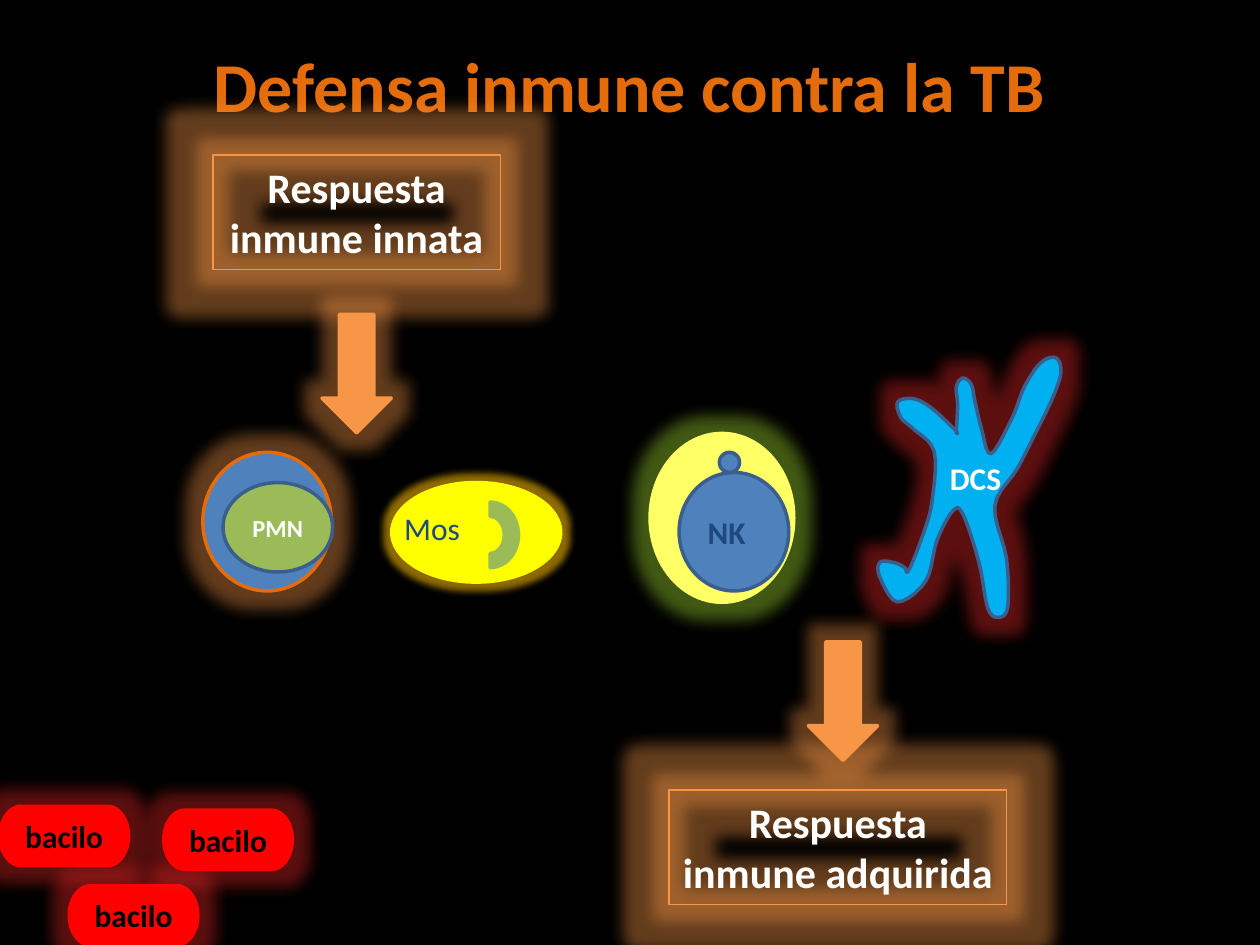
from math import hypot

from lxml.etree import SubElement
from pptx import Presentation
from pptx.dml.color import RGBColor
from pptx.enum.shapes import MSO_SHAPE
from pptx.enum.text import MSO_ANCHOR, MSO_AUTO_SIZE, PP_ALIGN
from pptx.oxml.ns import qn
from pptx.util import Inches, Pt

COLORS = {
    "black": "000000", "white": "FFFFFF", "title": "E46C0A", "orange": "F79646",
    "blue": "4F81BD", "outline": "3A5F8C", "navy": "1F497D", "green": "9BBB59",
    "pale": "FFFF66", "yellow": "FFFF00", "sky": "00B0F0", "red": "FF0000",
    "lime glow": "A5E030", "gold glow": "EFB500", "red glow": "E62626",
}
GLOWS = {
    "orange": ("orange", 18, 40),
    "lime": ("lime glow", 18, 40),
    "gold": ("gold glow", 8, 60),
    "red": ("red glow", 18, 40),
}
TITLE = "Defensa inmune contra la TB"
RESPONSES = [
    ("Respuesta inmune innata", (1.69, 1.23, 2.28, 0.91)),
    ("Respuesta inmune adquirida", (5.31, 6.27, 2.68, 0.91)),
]
ARROW_SIZE = (0.94, 0.55)
ARROWS = [(2.36, 2.69), (6.22, 5.29)]
BACILLUS_SIZE = (1.02, 0.47)
BACILLI = [(0, 6.4), (0.55, 7.03), (1.3, 6.43)]
NK_CELL = [
    (MSO_SHAPE.OVAL, (5.16, 3.44, 1.14, 1.34), "pale", "pale", "lime"),
    (MSO_SHAPE.OVAL, (5.39, 3.75, 0.87, 0.94), "blue", "outline"),
    (MSO_SHAPE.FLOWCHART_CONNECTOR, (5.71, 3.59, 0.16, 0.16), "blue", "outline"),
]
PMN_CELL = [
    (MSO_SHAPE.OVAL, (1.61, 3.59, 1.02, 1.1), "blue", "title", "orange"),
    (MSO_SHAPE.OVAL, (1.77, 3.83, 0.87, 0.71), "green", "outline"),
]
LIMB_SPINES = {
    "left arm": [(7.5, 3.5, 0.12), (7.32, 3.32, 0.11), (7.2, 3.24, 0.09)],
    "left leg": [(7.48, 4.02, 0.09), (7.38, 4.27, 0.06), (7.28, 4.57, 0.08),
                 (7.15, 4.64, 0.14), (7.04, 4.52, 0.08)],
    "right leg": [(7.77, 4.05, 0.13), (7.88, 4.45, 0.11), (7.92, 4.82, 0.08)],
    "right arm": [(7.97, 3.66, 0.12), (8.13, 3.37, 0.11), (8.24, 3.12, 0.12), (8.34, 2.92, 0.09)],
    "middle arm": [(7.69, 3.41, 0.1), (7.67, 3.2, 0.07), (7.65, 3.06, 0.06)],
}
CURVE_STEPS = 5


def limb_contour(spine):
    outward, homeward = [], []
    for index, (x, y, half_width) in enumerate(spine):
        before = spine[max(index - 1, 0)]
        after = spine[min(index + 1, len(spine) - 1)]
        run, rise = after[0] - before[0], after[1] - before[1]
        scale = half_width / hypot(run, rise)
        along_x, along_y = run * scale, rise * scale
        outward.append((x - along_y, y + along_x))
        homeward.insert(0, (x + along_y, y - along_x))
    tip = (x + along_x, y + along_y)
    return outward + [tip] + homeward


def spline(a, b, c, d, t):
    return b + t / 2 * (c - a + t * (2 * a - 5 * b + 4 * c - d + t * (3 * (b - c) + d - a)))


def smooth_loop(knots):
    points = []
    for index in range(len(knots)):
        neighbours = [knots[(index + shift) % len(knots)] for shift in (-1, 0, 1, 2)]
        for step in range(CURVE_STEPS):
            points.append([spline(*axis, step / CURVE_STEPS) for axis in zip(*neighbours)])
    return points


def rgb(name):
    return RGBColor.from_string(COLORS[name])


def add_glow(shape, color, radius, opacity):
    effects = shape.element.spPr.find(qn("a:effectLst"))
    glow = SubElement(effects, qn("a:glow"), rad=str(Pt(radius)))
    tint = SubElement(glow, qn("a:srgbClr"), val=COLORS[color])
    SubElement(tint, qn("a:alpha"), val=str(opacity * 1000))


def paint(shape, fill, line, glow=None, width=2):
    shape.shadow.inherit = False
    if fill:
        shape.fill.solid()
        shape.fill.fore_color.rgb = rgb(fill)
    else:
        shape.fill.background()
    shape.line.color.rgb = rgb(line)
    shape.line.width = Pt(width)
    if glow:
        add_glow(shape, *GLOWS[glow])


def add_figure(page, kind, place, fill, line, glow=None, width=2):
    shape = page.shapes.add_shape(kind, *map(Inches, place))
    paint(shape, fill, line, glow, width)
    return shape


def add_dendritic_cell(page):
    knots = [knot for spine in LIMB_SPINES.values() for knot in limb_contour(spine)]
    start, *rest = [tuple(map(Inches, point)) for point in smooth_loop(knots)]
    builder = page.shapes.build_freeform(*start)
    builder.add_line_segments(rest, close=True)
    paint(builder.convert_to_shape(), "sky", "outline", "red")


def write(shape, text, size, color, bold=True, align=PP_ALIGN.CENTER, anchor=MSO_ANCHOR.MIDDLE):
    frame = shape.text_frame
    frame.word_wrap = True
    frame.auto_size = MSO_AUTO_SIZE.NONE
    frame.vertical_anchor = anchor
    frame.text = text
    paragraph = frame.paragraphs[0]
    paragraph.alignment = align
    font = paragraph.font
    font.name, font.size, font.bold = "Calibri", Pt(size), bold
    font.color.rgb = rgb(color)


def add_label(page, place, text, color, bold):
    box = page.shapes.add_textbox(*map(Inches, place))
    write(box, text, 18, color, bold, PP_ALIGN.LEFT, MSO_ANCHOR.TOP)


def main():
    deck = Presentation()
    deck.slide_width, deck.slide_height = Inches(10), Inches(7.5)
    page = deck.slides.add_slide(deck.slide_layouts[5])
    page.background.fill.solid()
    page.background.fill.fore_color.rgb = rgb("black")

    title = page.shapes.title
    title.left, title.top, title.width, title.height = map(Inches, (0.43, 0.29, 9.13, 1.45))
    write(title, TITLE, 40, "title", anchor=MSO_ANCHOR.TOP)

    nk_body, nk_nucleus, nk_bud = [add_figure(page, *part) for part in NK_CELL]
    write(nk_nucleus, "NK", 18, "navy", align=PP_ALIGN.LEFT)

    add_figure(page, MSO_SHAPE.OVAL, (3.11, 3.83, 1.34, 0.79), "yellow", "yellow", "gold")
    add_label(page, (3.11, 3.99, 0.94, 0.4), "Mos", "navy", False)
    mos_nucleus = add_figure(page, MSO_SHAPE.BLOCK_ARC, (3.63, 4.02, 0.52, 0.45), "green", "green")
    mos_nucleus.rotation = 90

    pmn_body, pmn_nucleus = [add_figure(page, *part) for part in PMN_CELL]
    write(pmn_nucleus, "PMN", 14, "white")

    add_dendritic_cell(page)
    add_label(page, (7.44, 3.59, 0.63, 0.4), "DCS", "white", True)

    for text, place in RESPONSES:
        box = add_figure(page, MSO_SHAPE.RECTANGLE, place, None, "orange", "orange", 0.75)
        write(box, text, 24, "white", anchor=MSO_ANCHOR.TOP)
    for corner in ARROWS:
        arrow = add_figure(page, MSO_SHAPE.RIGHT_ARROW, corner + ARROW_SIZE, "orange", "orange", "orange")
        arrow.rotation = 90
    for corner in BACILLI:
        bacillus = add_figure(page, MSO_SHAPE.FLOWCHART_TERMINATOR, corner + BACILLUS_SIZE, "red", "red", "red")
        write(bacillus, "bacilo", 18, "black")

    deck.save("out.pptx")


if __name__ == "__main__":
    main()
